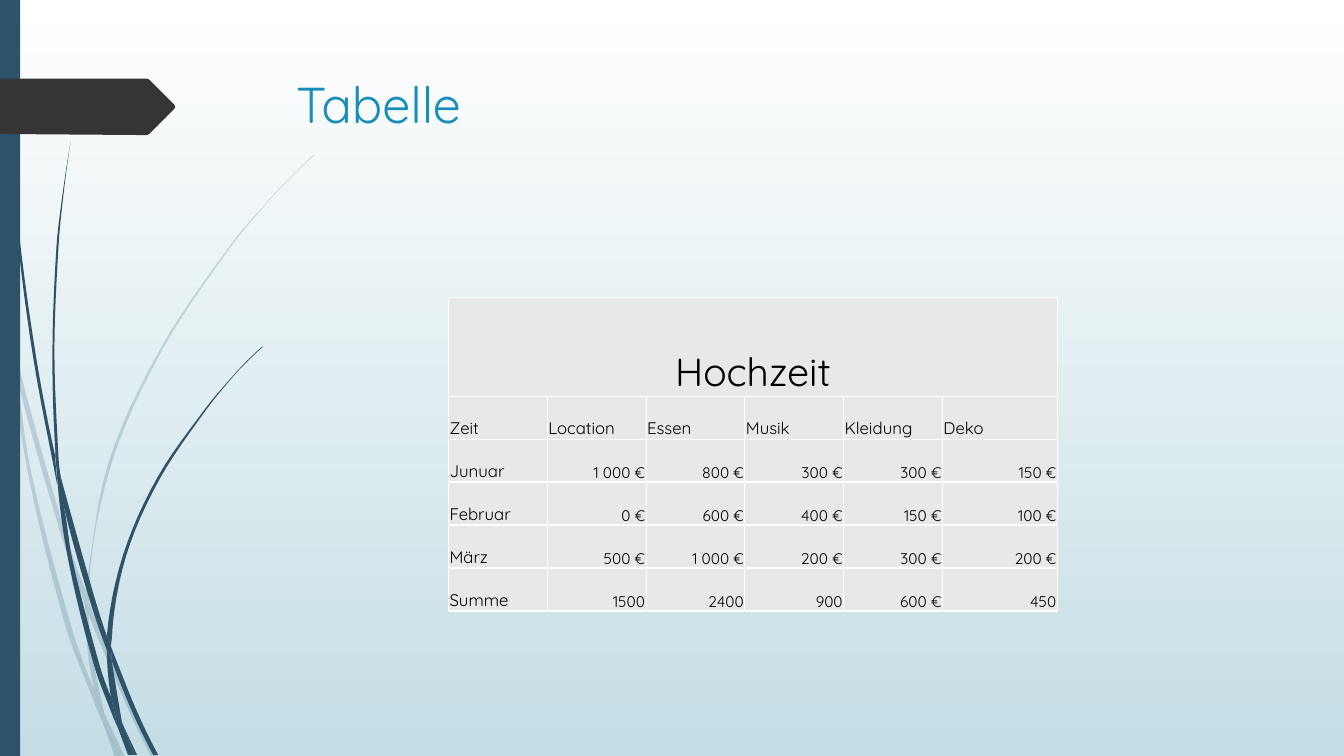
from itertools import product
from lxml.etree import SubElement
from pptx import Presentation
from pptx.dml.color import RGBColor
from pptx.enum.shapes import MSO_SHAPE
from pptx.enum.text import MSO_ANCHOR, PP_ALIGN
from pptx.oxml.ns import qn
from pptx.util import Pt

WHITE = RGBColor(0xFF, 0xFF, 0xFF)
BLACK = RGBColor(0, 0, 0)
MIST = RGBColor(0xC5, 0xDE, 0xE5)
NAVY = RGBColor(0x2E, 0x53, 0x69)
CHARCOAL = RGBColor(0x35, 0x35, 0x35)
BLUE = RGBColor(0x17, 0x8D, 0xBB)
CELL_GREY = RGBColor(0xE8, 0xE8, 0xE8)
FONT = "Quicksand"

TITLE = "Tabelle"
TABLE_TITLE = "Hochzeit"
BUDGET = [
    ("Zeit", "Location", "Essen", "Musik", "Kleidung", "Deko"),
    ("Junuar", "1 000 €", "800 €", "300 €", "300 €", "150 €"),
    ("Februar", "0 €", "600 €", "400 €", "150 €", "100 €"),
    ("März", "500 €", "1 000 €", "200 €", "300 €", "200 €"),
    ("Summe", "1500", "2400", "900", "600 €", "450"),
]
COLUMNS = [70.56] * 5 + [82.08]
ROWS = [70.56] + [30.7] * 5

# Each outline is a list of smooth sides; a side ends where the next begins.
UNIT = 0.72
PALE_STEMS = [
    [[(11, 350), (9, 322)], [(0, 282)], [(0, 299), (10, 344)]],
    [[(14, 345), (17, 376), (58, 522)], [(84, 599)], [(85, 586), (62, 520)]],
    [[(88, 596)], [(88, 610), (123, 694)], [(150, 751)], [(155, 751), (127, 692), (92, 607)]],
    [[(119, 751)], [(124, 751)], [(105, 711)]],
    [[(11, 350), (28, 470), (65, 621), (92, 693)], [(101, 714), (99, 707)],
     [(93, 683), (70, 619), (31, 469), (17, 376)]],
    [[(84, 599), (87, 646), (93, 683), (96, 692)], [(105, 711), (103, 706), (91, 646)],
     [(88, 610), (88, 608)]],
    [[(88, 584), (110, 462), (160, 349), (229, 245), (268, 198), (290, 175)],
     [(312, 154)],
     [(312, 153), (289, 175), (268, 197), (228, 244), (158, 348), (107, 461), (85, 584)],
     [(85, 586)], [(88, 596)]],
    [[(101, 714)], [(114, 751)], [(119, 751)]],
    [[(88, 608)], [(88, 610)], [(88, 596)], [(85, 586)], [(84, 599)]],
    [[(96, 692)], [(93, 683), (99, 707), (101, 714)], [(119, 751)], [(105, 711)]],
]
DARK_STEMS = [
    [[(7, 110), (17, 233), (33, 355), (56, 477)], [(57, 481)], [(55, 457)],
     [(55, 453), (36, 355), (19, 232), (8, 109), (5, 48)], [(4, 0)], [(3, 0), (4, 48)]],
    [[(60, 472), (64, 505), (88, 592)], [(106, 645)], [(106, 633)], [(106, 631), (93, 590)]],
    [[(110, 641)], [(111, 656), (132, 708)], [(152, 749)], [(157, 749), (136, 706), (113, 649)]],
    [[(57, 477), (68, 557), (93, 659), (111, 708)], [(117, 722), (116, 717)],
     [(110, 691), (98, 657), (72, 556), (64, 505)]],
    [[(60, 472), (58, 453), (54, 349), (58, 245), (63, 193)],
     [(70, 141), (62, 193), (56, 245), (52, 349), (55, 449)]],
    [[(133, 749)], [(136, 749)], [(122, 719)]],
    [[(57, 477)], [(64, 505)], [(60, 472)], [(55, 449)], [(55, 453)]],
    [[(111, 633), (125, 552), (158, 476), (205, 406), (231, 374), (245, 359)],
     [(261, 344)],
     [(260, 344), (245, 358), (231, 373), (204, 405), (156, 474), (122, 551)],
     [(106, 631)], [(110, 641)]],
    [[(117, 722)], [(127, 749)], [(131, 749)]],
    [[(106, 645), (110, 691), (116, 706)], [(122, 719), (121, 716)],
     [(111, 656), (109, 651)]],
    [[(106, 645)], [(109, 651)], [(111, 656)], [(110, 641)], [(106, 631)], [(106, 633)]],
    [[(116, 706)], [(110, 691), (116, 717), (117, 722)], [(130, 749)],
     [(133, 749)], [(122, 719)]],
]
TAG = [[corner] for corner in [
    (0, 78), (136, 78), (146, 78), (148, 79), (173, 104), (174, 106),
    (173, 108), (148, 133), (146, 134), (136, 134), (0, 133)]]


def apply(target, values):
    for name, value in values.items():
        setattr(target, name, value)


def write(frame, text, size, color, align):
    para = frame.paragraphs[0]
    para.alignment = align
    span = para.add_run()
    span.text = text
    apply(span.font, {"name": FONT, "size": Pt(size)})
    span.font.color.rgb = color


def paint(shape, color, opacity=100):
    shape.shadow.inherit = False
    shape.fill.solid()
    shape.fill.fore_color.rgb = color
    shape.line.fill.background()
    if opacity < 100:
        tone = shape.fill._xPr.find(qn("a:solidFill"))[0]
        SubElement(tone, qn("a:alpha")).set("val", str(opacity * 1000))


def smooth(side, steps=6):
    nodes = [complex(*node) for node in side]
    chords = [end - start for start, end in zip(nodes, nodes[1:])]
    if len(chords) == 1:
        return nodes
    inner = [after - before for before, after in zip(nodes, nodes[2:])]
    first = chords[0] ** 2 * inner[0].conjugate()
    last = chords[-1] ** 2 * inner[-1].conjugate()
    headings = [turn / abs(turn) for turn in [first, *inner, last]]
    curve = [nodes[0]]
    for index, chord in enumerate(chords):
        start, end = nodes[index:index + 2]
        reach = abs(chord) / 3
        leave = start + headings[index] * reach
        arrive = end - headings[index + 1] * reach
        for step in range(1, steps + 1):
            t = step / steps
            curve.append((1 - t) ** 3 * start + 3 * (1 - t) ** 2 * t * leave
                         + 3 * (1 - t) * t ** 2 * arrive + t ** 3 * end)
    return curve


def draw(shapes, sides, color, opacity=100):
    outline = []
    for side, following in zip(sides, sides[1:] + sides[:1]):
        outline += smooth(side + following[:1])[:-1]
    corners = [(Pt(dot.real * UNIT), Pt(dot.imag * UNIT)) for dot in outline]
    builder = shapes.build_freeform(*corners[0])
    builder.add_line_segments(corners[1:], close=True)
    paint(builder.convert_to_shape(), color, opacity)


def fill_cell(cell, text, size, align):
    apply(cell, {"vertical_anchor": MSO_ANCHOR.BOTTOM, "margin_left": Pt(0.72),
                 "margin_right": Pt(0.72), "margin_top": Pt(0.72), "margin_bottom": 0})
    cell.fill.solid()
    cell.fill.fore_color.rgb = CELL_GREY
    if text:
        write(cell.text_frame, text, size, BLACK, align)
    settings = cell._tc.get_or_add_tcPr()
    for index, edge in enumerate(("a:lnL", "a:lnR", "a:lnT", "a:lnB")):
        border = SubElement(settings, qn(edge), w=str(Pt(1)))
        tone = SubElement(SubElement(border, qn("a:solidFill")), qn("a:srgbClr"))
        tone.set("val", str(WHITE))
        settings.insert(index, border)


def add_budget(page):
    frame = page.shapes.add_table(len(ROWS), len(COLUMNS), Pt(320.4), Pt(212.4),
                                  Pt(sum(COLUMNS)), Pt(sum(ROWS)))
    table = frame.table
    for column, width in zip(table.columns, COLUMNS):
        column.width = Pt(width)
    for row, height in zip(table.rows, ROWS):
        row.height = Pt(height)
    table.cell(0, 0).merge(table.cell(0, len(COLUMNS) - 1))
    texts = [[TABLE_TITLE] + [""] * (len(COLUMNS) - 1), *BUDGET]
    for row, column in product(range(len(ROWS)), range(len(COLUMNS))):
        if row == 0:
            size, align = 28, PP_ALIGN.CENTER
        elif row == 1 or column == 0:
            size, align = 12, PP_ALIGN.LEFT
        else:
            size, align = 11, PP_ALIGN.RIGHT
        fill_cell(table.cell(row, column), texts[row][column], size, align)


def main():
    deck = Presentation()
    apply(deck, {"slide_width": Pt(960), "slide_height": Pt(540)})
    page = deck.slides.add_slide(deck.slide_layouts[6])
    backdrop = page.background.fill
    backdrop.gradient()
    backdrop.gradient_angle = 270
    for stop, color, position in zip(backdrop.gradient_stops, (WHITE, MIST), (0, 1)):
        stop.color.rgb = color
        stop.position = position
    for stems, opacity in ((PALE_STEMS, 20), (DARK_STEMS, 100)):
        group = page.shapes.add_group_shape()
        for sides in stems:
            draw(group.shapes, sides, NAVY, opacity)
    paint(page.shapes.add_shape(MSO_SHAPE.RECTANGLE, 0, 0, Pt(14.4), Pt(540)), NAVY)
    draw(page.shapes, TAG, CHARCOAL)
    box = page.shapes.add_textbox(Pt(204.5), Pt(49), Pt(702), Pt(100.8))
    apply(box.text_frame, {"word_wrap": True, "vertical_anchor": MSO_ANCHOR.TOP})
    write(box.text_frame, TITLE, 36, BLUE, PP_ALIGN.LEFT)
    add_budget(page)
    deck.save("out.pptx")


if __name__ == "__main__":
    main()
